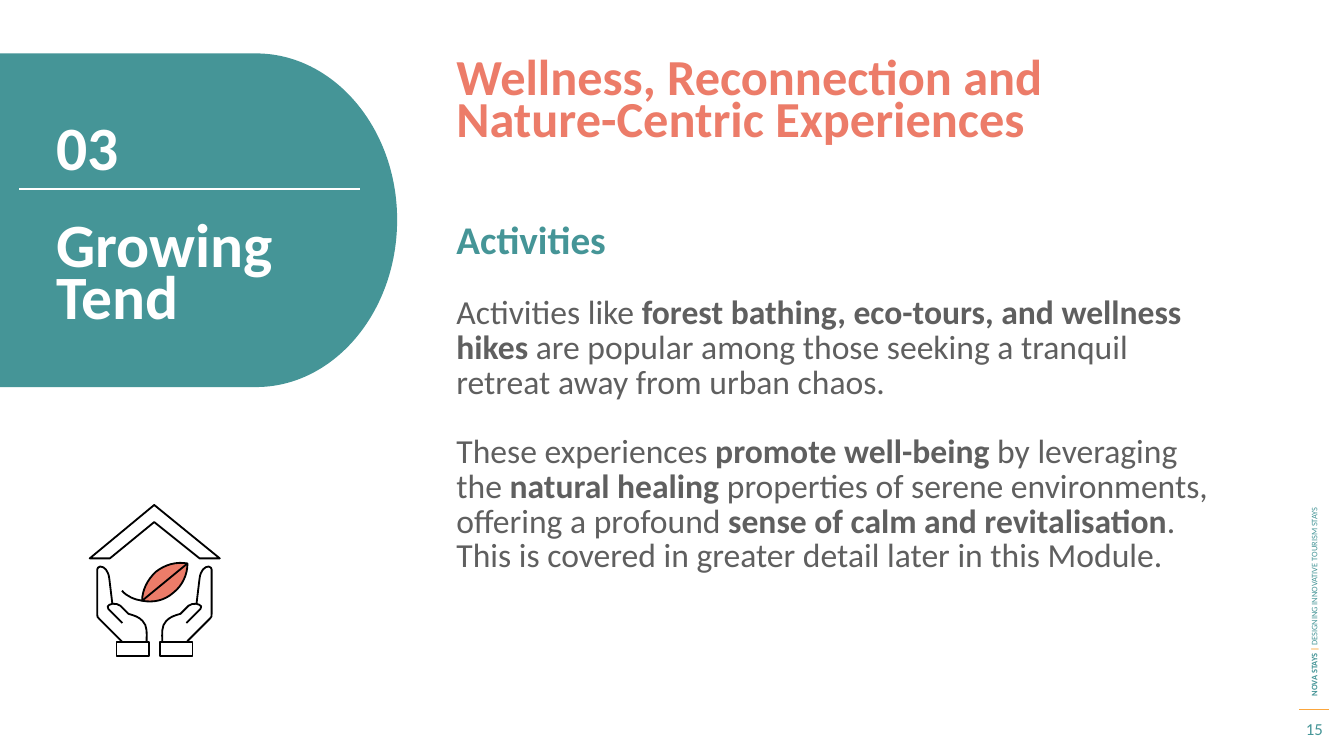
from pptx import Presentation
from pptx.dml.color import RGBColor
from pptx.enum.shapes import MSO_CONNECTOR
from pptx.enum.text import MSO_ANCHOR, PP_ALIGN
from pptx.oxml import parse_xml
from pptx.oxml.ns import nsdecls, qn
from pptx.util import Pt

TEAL = RGBColor(0x45, 0x95, 0x97)
CORAL = RGBColor(0xEC, 0x7C, 0x69)
AMBER = RGBColor(0xFB, 0xA6, 0x3B)
GOLD = RGBColor(0xFB, 0xA6, 0x3D)
GREY = RGBColor(0x5F, 0x5F, 0x5F)
WHITE = RGBColor(0xFF, 0xFF, 0xFF)
BLACK = RGBColor(0x00, 0x00, 0x00)

STRAIGHT = MSO_CONNECTOR.STRAIGHT
TOP, MIDDLE = MSO_ANCHOR.TOP, MSO_ANCHOR.MIDDLE
LEFT, CENTER = PP_ALIGN.LEFT, PP_ALIGN.CENTER

COLS, ROWS = 1333.33, 750
CELL = 9144
AXIS = 306.5

PANEL = [(0, 53), (247, 53), (249, 53, 252, 53, 254, 53),
         (331, 53, 394, 127, 394, 218), (394, 310, 331, 384, 254, 384),
         (252, 384, 249, 384, 247, 384), (0, 384)]
STEM = [(141, 596), (134, 595, 126, 592, 121, 586)]
LEAF = [(155, 567), (146, 575, 141, 586, 141, 596),
        (152, 598, 163, 596, 172, 588), (181, 581, 186, 570, 186, 559),
        (175, 557, 164, 560, 155, 567)]
VEIN = [(141, 596), (186, 559)]
ROOF = [(89, 554), (153, 501), (218, 554), (198, 554), (153, 518), (109, 554)]
HAND = [(185, 637), (208, 614), (210, 613, 210, 611, 210, 609), (210, 565),
        (210, 564, 209, 562, 207, 562), (203, 562, 199, 566, 198, 574),
        (195, 599), (192, 599, 189, 599, 187, 601), (179, 609),
        (172, 611, 169, 612, 165, 616), (160, 621, 161, 628, 161, 637)]
CUFF = [(159, 637), (191, 637), (191, 651), (159, 651)]
THUMB = [(195, 599), (196, 599, 197, 599, 198, 600),
         (199, 601, 201, 602, 199, 604), (185, 618)]


def emu(value):
    return round(value * CELL)


def mirror(steps):
    return [tuple(AXIS - v if k % 2 == 0 else v for k, v in enumerate(step))
            for step in steps]


def bend(shape, steps):
    lines = iter(list(shape._element.iter(qn("a:lnTo"))))
    for step in steps[1:]:
        first = next(lines)
        if len(step) == 6:
            curve = parse_xml(f"<a:cubicBezTo {nsdecls('a')}/>")
            first.addprevious(curve)
            for line in (first, next(lines), next(lines)):
                curve.append(line[0])
                line.getparent().remove(line)


class Page:
    face = "Calibri"
    ink = 1.3

    def __init__(self, deck):
        self.shapes = deck.slides.add_slide(deck.slide_layouts[6]).shapes

    def rule(self, x1, x2, y, color, width):
        line = self.shapes.add_connector(
            STRAIGHT, emu(x1), emu(y), emu(x2), emu(y))
        line.line.color.rgb = color
        line.line.width = Pt(width)
        line._element.spPr.append(
            parse_xml(f"<a:effectLst {nsdecls('a')}/>"))

    def form(self, steps, fill=None, edge=BLACK, closed=True, group=None):
        dots = [(emu(step[k]), emu(step[k + 1]))
                for step in steps for k in range(0, len(step), 2)]
        shapes = group.shapes if group else self.shapes
        pen = shapes.build_freeform(*dots[0], scale=1.0)
        pen.add_line_segments(dots[1:], close=closed)
        shape = pen.convert_to_shape()
        bend(shape, steps)
        shape.shadow.inherit = False
        if fill is None:
            shape.fill.background()
        else:
            shape.fill.solid()
            shape.fill.fore_color.rgb = fill
        if edge is None:
            shape.line.fill.background()
        else:
            shape.line.color.rgb = edge
            shape.line.width = Pt(self.ink)

    def font(self, font, size, color, bold):
        font.name = self.face
        font.size = Pt(size)
        font.color.rgb = color
        font.bold = bold

    def text(self, place, paras, lead=None, anchor=TOP, align=LEFT, turn=0):
        box = self.shapes.add_textbox(*map(emu, place))
        box.rotation = turn
        frame = box.text_frame
        frame.word_wrap = True
        frame.vertical_anchor = anchor
        for i, (size, color, bold, runs) in enumerate(paras):
            para = frame.add_paragraph() if i else frame.paragraphs[0]
            para.alignment = align
            if lead:
                para.line_spacing = Pt(lead)
            if i:
                para.space_before = Pt(lead)
            self.font(para.font, size, color, bold)
            for words, heavy, tint in runs:
                run = para.add_run()
                run.text = words
                if heavy != bold:
                    run.font.bold = heavy
                if tint != color:
                    run.font.color.rgb = tint

    def label(self, place, words, size, color, bold=True, **style):
        self.text(place, [(size, color, bold, [(words, bold, color)])], **style)


def weave(*parts):
    return [(words, i % 2 == 1, GREY) for i, words in enumerate(parts)]


def main():
    deck = Presentation()
    deck.slide_width, deck.slide_height = emu(COLS), emu(ROWS)
    page = Page(deck)

    page.rule(1289, 1318, 704, GOLD, 0.75)
    page.text((1015, 402, 577, 20), [(6, TEAL, True, [
        ("NOVA STAYS ", True, TEAL), ("| ", True, AMBER),
        ("DESIGNING INNOVATIVE TOURISM STAYS", False, TEAL)])],
        anchor=MIDDLE, turn=270)
    page.form(PANEL, TEAL, None)
    page.rule(19, 357, 187.5, WHITE, 1.75)

    page.label((46, 220.7, 270, 115), "Growing Tend", 44, WHITE, lead=37.4)
    page.label((46, 103, 131, 42), "03", 44, WHITE)
    page.label((443, 59, 690, 88),
               "Wellness, Reconnection and Nature-Centric Experiences",
               36, CORAL, lead=29.6)
    page.text((443, 220.7, 769, 413), [
        (28, TEAL, True, [("Activities", True, TEAL)]),
        (24, GREY, False, weave(
            "Activities like ",
            "forest bathing, eco-tours, and wellness hikes ",
            "are popular among those seeking a tranquil retreat away from "
            "urban chaos.")),
        (24, GREY, False, weave(
            "These experiences ", "promote well-being ",
            "by leveraging the ", "natural healing ",
            "properties of serene environments, offering a profound ",
            "sense of calm and revitalisation",
            ". This is covered in greater detail later in this Module.")),
    ], lead=24.8)
    page.label((1278, 706, 52, 34), "15", 12, TEAL, False,
               anchor=MIDDLE, align=CENTER)

    icon = page.shapes.add_group_shape()
    page.form(STEM, closed=False, group=icon)
    page.form(LEAF, CORAL, group=icon)
    page.form(VEIN, closed=False, group=icon)
    page.form(ROOF, group=icon)
    for side in (list, mirror):
        page.form(side(HAND), closed=False, group=icon)
        page.form(side(CUFF), group=icon)
        page.form(side(THUMB), closed=False, group=icon)
    deck.save("out.pptx")


if __name__ == "__main__":
    main()
